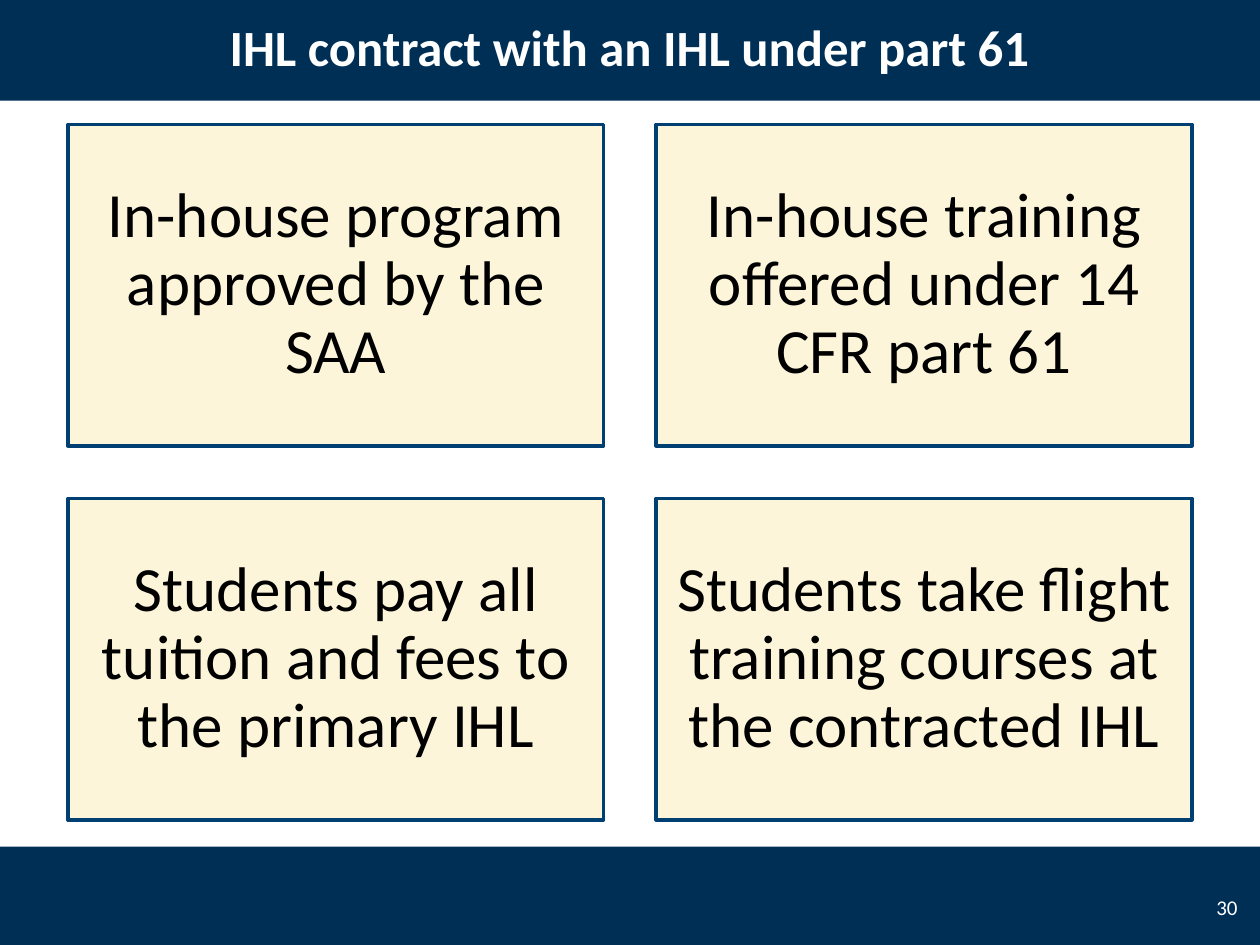
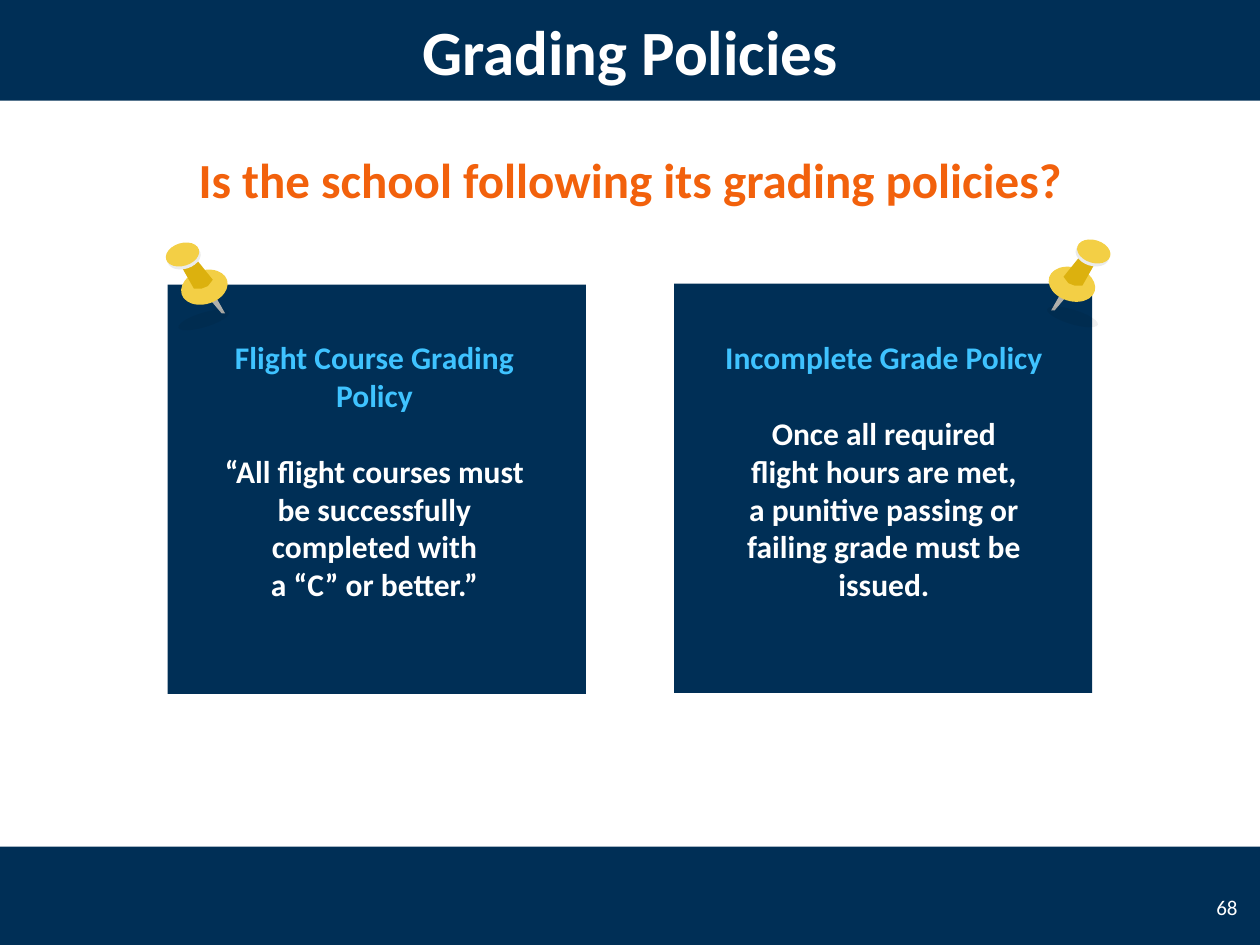
"""Build two slides on flight training contracts and grading policies."""
import dataclasses

import lxml.etree
import pptx
import pptx.dml.color
import pptx.enum.shapes
import pptx.enum.text
import pptx.oxml.ns
import pptx.util

Cm = pptx.util.Cm
Align = pptx.enum.text.PP_ALIGN
Anchor = pptx.enum.text.MSO_ANCHOR
Shape = pptx.enum.shapes.MSO_SHAPE


@dataclasses.dataclass(frozen=True)
class Theme:
    font: str = "Calibri"
    navy: str = "002F56"
    white: str = "FFFFFF"
    black: str = "000000"
    cream: str = "FDF5DA"
    border: str = "003F72"
    sky: str = "3FC3FF"
    orange: str = "F2610C"
    pin_yellow: str = "F3CF45"
    pin_gold: str = "DCB10E"
    pin_rim: str = "EAEBEB"
    pin_needle: str = "B0B0AC"
    title_size: int = 36
    long_title_size: int = 29
    card_size: int = 36
    question_size: int = 28
    note_size: int = 18
    number_size: int = 12
    width: float = 25.4
    height: float = 19.05
    band_height: float = 2.03
    footer_top: float = 17.07


def rgb(value):
    return pptx.dml.color.RGBColor.from_string(value)


def write(frame, lines, *, size, color, bold=False, align=Align.CENTER, spacing=None,
          heading_count=0, heading_color=None, font=Theme.font):
    for index, line in enumerate(lines):
        para = frame.paragraphs[0] if index == 0 else frame.add_paragraph()
        para.alignment = align
        para.line_spacing = spacing
        if heading_count and index == heading_count:
            para.space_before = pptx.util.Pt(size * 1.22)
        span = para.add_run()
        span.text = line
        span.font.name = font
        span.font.size = pptx.util.Pt(size)
        span.font.bold = bold
        span.font.color.rgb = rgb(heading_color if index < heading_count else color)


class SlideBuilder:
    def __init__(self, deck, theme):
        self.deck = deck
        self.theme = theme
        self.page = None

    def start(self, title, number, size, title_height):
        theme = self.theme
        self.page = self.deck.slides.add_slide(self.deck.slide_layouts[6])
        self.rectangle(0, theme.footer_top, theme.width, theme.height - theme.footer_top, theme.navy)
        self.rectangle(0, 0, theme.width, theme.band_height, theme.navy)
        self.text(24.13, 17.78, 1.07, 1.02, [str(number)], size=theme.number_size,
                  color=theme.white, align=Align.RIGHT, wrap=False)
        self.text(1.27, 0, 22.86, title_height, [title], size=size, color=theme.white, bold=True)

    def paint(self, shape, fill, line=None):
        shape.shadow.inherit = False
        shape.fill.solid()
        shape.fill.fore_color.rgb = rgb(fill)
        if line:
            shape.line.color.rgb = rgb(line)
            shape.line.width = pptx.util.Pt(2)
        else:
            shape.line.fill.background()
        return shape

    def rectangle(self, left, top, width, height, fill, line=None):
        shape = self.page.shapes.add_shape(Shape.RECTANGLE, Cm(left), Cm(top), Cm(width), Cm(height))
        return self.paint(shape, fill, line)

    def text(self, left, top, width, height, lines, *, anchor=Anchor.MIDDLE, inset=None,
             wrap=True, **style):
        box = self.page.shapes.add_textbox(Cm(left), Cm(top), Cm(width), Cm(height))
        self.fill_frame(box.text_frame, lines, anchor, inset, wrap, **style)

    def fill_frame(self, frame, lines, anchor, inset, wrap, **style):
        frame.word_wrap = wrap
        frame.vertical_anchor = anchor
        if inset is not None:
            frame.margin_left = frame.margin_right = Cm(inset)
            frame.margin_top = frame.margin_bottom = Cm(inset)
        write(frame, lines, **style)

    def card(self, left, top, width, height, message):
        theme = self.theme
        box = self.rectangle(left, top, width, height, theme.cream, theme.border)
        self.fill_frame(box.text_frame, [message], Anchor.MIDDLE, 0.38, True,
                        size=theme.card_size, color=theme.black, spacing=0.9)

    def note_text(self, left, top, width, height, lines, heading_count, wrap):
        theme = self.theme
        self.text(left, top, width, height, lines, anchor=Anchor.TOP, inset=0, wrap=wrap,
                  size=theme.note_size, color=theme.white, bold=True,
                  heading_count=heading_count, heading_color=theme.sky)

    def pushpin(self, center_x, center_y, side):
        """Draw a pin around its head, leaning left for side 1 and right for side -1."""
        theme = self.theme
        shapes = self.page.shapes.add_group_shape().shapes

        def oval(x, y, width, height, fill):
            left = center_x + side * x - width / 2
            top = center_y + y - height / 2
            shape = shapes.add_shape(Shape.OVAL, Cm(left), Cm(top), Cm(width), Cm(height))
            shape.rotation = side * 17
            return self.paint(shape, fill)

        def outline(points, fill):
            corners = [(Cm(center_x + side * x), Cm(center_y + y)) for x, y in points]
            builder = shapes.build_freeform(*corners[0])
            builder.add_line_segments(corners[1:], close=True)
            self.paint(builder.convert_to_shape(), fill)

        outline([(-0.69, 0.89), (-0.86, 1.19), (-0.79, 1.19), (-0.58, 0.94)], theme.pin_needle)
        shade = oval(-0.43, 1.32, 1.07, 0.29, theme.black)
        tint = shade.fill._xPr.find(".//" + pptx.oxml.ns.qn("a:srgbClr"))
        lxml.etree.SubElement(tint, pptx.oxml.ns.qn("a:alpha"), val="6000")
        oval(-0.44, 0.66, 0.96, 0.68, theme.pin_yellow)
        outline([(-0.28, 0.1), (-0.61, 0.51), (-0.51, 0.64), (-0.38, 0.69), (-0.23, 0.69),
                 (0.03, 0.23)], theme.pin_gold)
        oval(-0.03, 0.06, 0.69, 0.46, theme.pin_rim)
        oval(0, 0, 0.69, 0.46, theme.pin_yellow)


def contract_slide(builder):
    builder.start("IHL contract with an IHL under part 61", 30,
                  builder.theme.long_title_size, 1.85)
    messages = [
        "In-house\u00a0program approved by the SAA".replace("\u00a0", " "),
        "In-house training offered under 14 CFR part 61",
        "Students pay all tuition and fees to the primary IHL",
        "Students take flight training courses at the contracted IHL",
    ]
    width, height, gap = 10.8, 6.48, 1.06
    for index, message in enumerate(messages):
        row, column = divmod(index, 2)
        builder.card(1.37 + column * (width + gap), 2.51 + row * (height + gap),
                     width, height, message)


def grading_slide(builder):
    theme = builder.theme
    builder.start("Grading Policies", 68, theme.title_size, theme.band_height)
    for left, top in [(13.59, 5.72), (3.38, 5.74)]:
        builder.rectangle(left, top, 8.43, 8.25, theme.navy)
    builder.note_text(14.48, 6.81, 6.68, 6.1, [
        "Incomplete Grade Policy",
        "Once all required",
        "flight hours are met,",
        "a punitive passing or failing grade must be issued.",
    ], heading_count=1, wrap=True)
    builder.note_text(3.84, 6.81, 7.42, 7.62, [
        "Flight Course Grading",
        "Policy",
        "“All flight courses must",
        "be successfully",
        "completed with",
        "a “C” or better.”",
    ], heading_count=2, wrap=False)
    builder.pushpin(22.05, 5.07, 1)
    builder.pushpin(3.68, 5.13, -1)
    builder.text(0, 2.62, theme.width, 1.98, ["Is the school following its grading policies?"],
                 size=theme.question_size, color=theme.orange, bold=True)


def main():
    theme = Theme()
    deck = pptx.Presentation()
    deck.slide_width = Cm(theme.width)
    deck.slide_height = Cm(theme.height)
    builder = SlideBuilder(deck, theme)
    contract_slide(builder)
    grading_slide(builder)
    deck.save("out.pptx")


if __name__ == "__main__":
    main()
